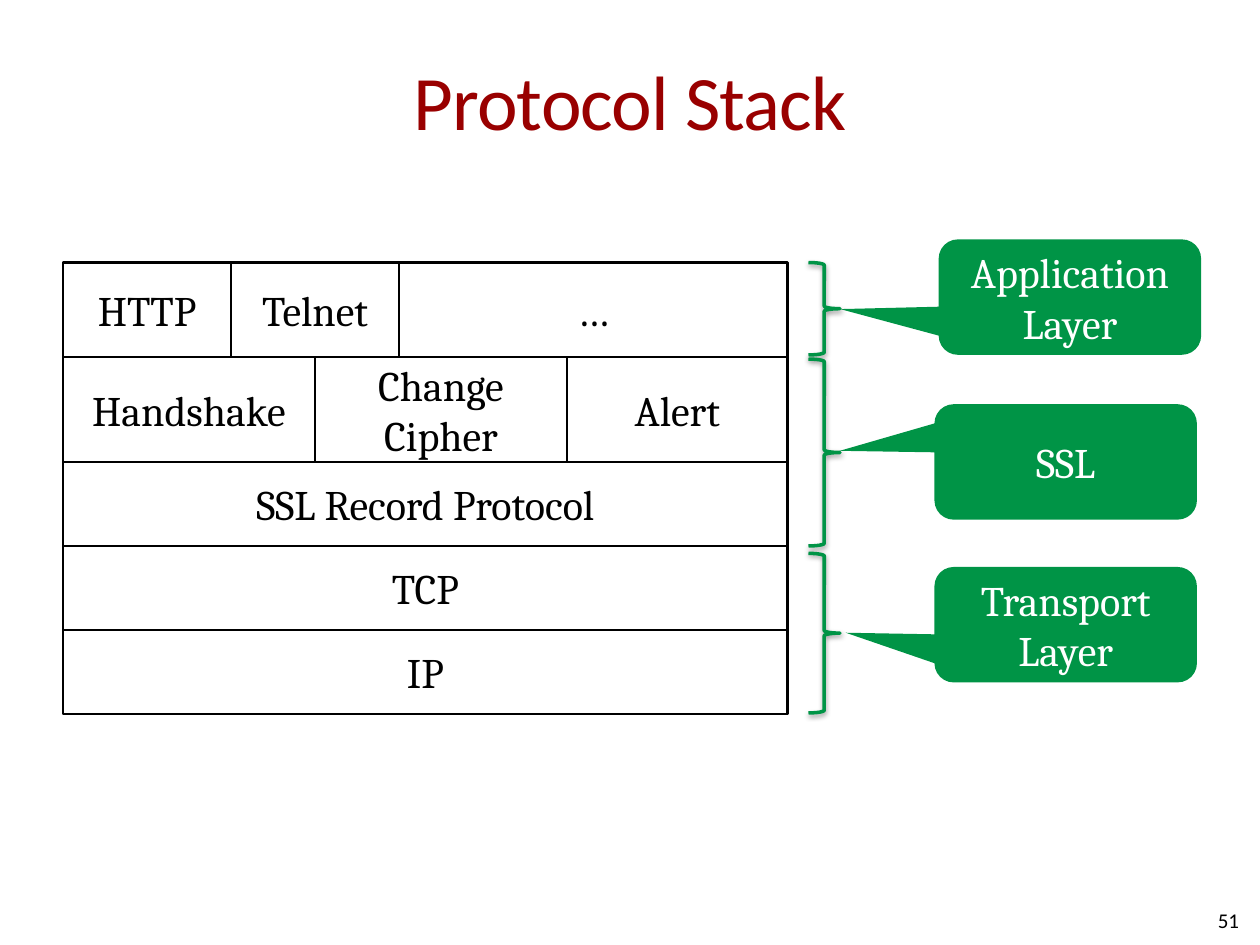
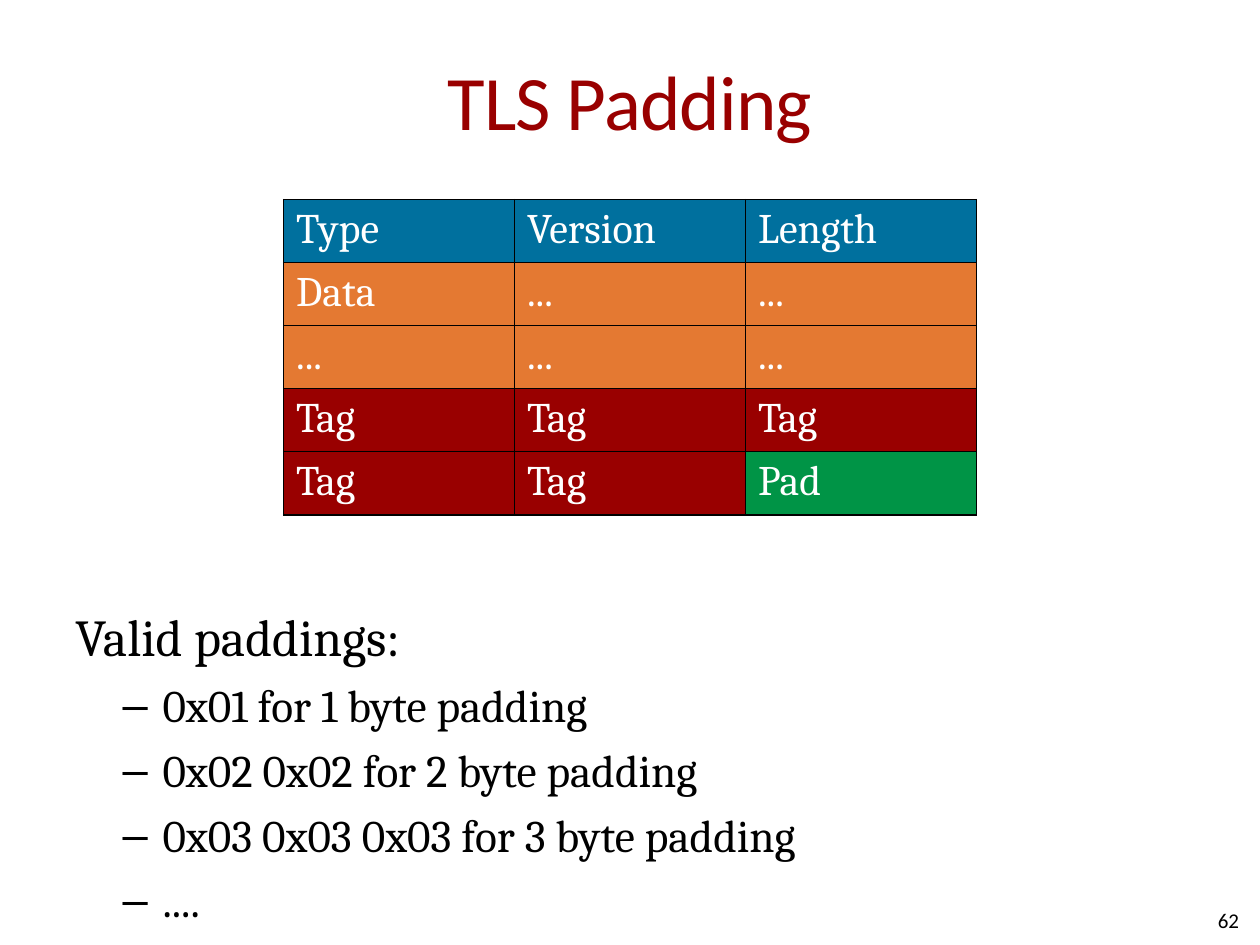
from itertools import accumulate

from pptx import Presentation
from pptx.dml.color import RGBColor
from pptx.enum.shapes import MSO_SHAPE as Shape
from pptx.enum.text import MSO_ANCHOR as Anchor, PP_ALIGN as Align
from pptx.oxml import parse_xml
from pptx.oxml.ns import nsdecls
from pptx.util import Pt

PX = 7620  # EMU, 120 px to the inch

BLACK = RGBColor(0x00, 0x00, 0x00)
WHITE = RGBColor(0xFF, 0xFF, 0xFF)
RED = RGBColor(0x99, 0x00, 0x00)
GREEN = RGBColor(0x00, 0x94, 0x46)
BLUE = RGBColor(0x00, 0x70, 0x9E)
ORANGE = RGBColor(0xE4, 0x79, 0x32)

HEADING_FONT = "Calibri"
TEXT_FONT = "Cambria"


def px(*lengths):
    return [length * PX for length in lengths]


class SlideBuilder:
    """Holds the deck's style and the page being built."""

    def __init__(self, deck):
        self.deck = deck
        self.page = None

    def start_page(self, title, number):
        self.page = self.deck.slides.add_slide(self.deck.slide_layouts[5])
        heading = self.page.shapes.title
        heading.left, heading.top, heading.width, heading.height = px(60, 20, 1080, 150)
        self.set_frame(heading.text_frame, sides=0, ends=6)
        span = self.add_text(heading.text_frame.paragraphs[0], title, 44, RED,
                             Align.CENTER, HEADING_FONT)
        span.font._element.set("spc", "-50")
        footer = self.text_box(900, 852, 280, 48)
        self.set_frame(footer, sides=0, ends=0)
        self.add_text(footer.paragraphs[0], str(number), 12, BLACK, Align.RIGHT, HEADING_FONT)

    def set_frame(self, frame, sides=12, ends=6, anchor=Anchor.MIDDLE, wrap=True):
        frame.margin_left, frame.margin_right = px(sides, sides)
        frame.margin_top, frame.margin_bottom = px(ends, ends)
        frame.vertical_anchor = anchor
        frame.word_wrap = wrap

    def add_text(self, para, text, size=24, color=BLACK, align=Align.LEFT, font=TEXT_FONT):
        """Add text to a paragraph, a line break at each newline; return the last run."""
        para.alignment = align
        for index, line in enumerate(text.split("\n")):
            if index:
                para.add_line_break()
            span = para.add_run()
            span.text = line
            span.font.size = Pt(size)
            span.font.name = font
            span.font.color.rgb = color
        return span

    def text_box(self, left, top, width, height):
        return self.page.shapes.add_textbox(*px(left, top, width, height)).text_frame

    def shape(self, kind, left, top, width, height, fill=None, line=None, weight=1.5):
        shape = self.page.shapes.add_shape(kind, *px(left, top, width, height))
        shape.shadow.inherit = False
        if fill is None:
            shape.fill.background()
        else:
            shape.fill.solid()
            shape.fill.fore_color.rgb = fill
        if line is None:
            shape.line.fill.background()
        else:
            shape.line.color.rgb = line
            shape.line.width = Pt(weight)
        return shape

    def protocol(self, text, left, top, width, height):
        box = self.shape(Shape.RECTANGLE, left, top, width, height, line=BLACK)
        self.set_frame(box.text_frame, wrap=False)
        self.add_text(box.text_frame.paragraphs[0], text, align=Align.CENTER)

    def brace(self, left, top, width, height):
        brace = self.shape(Shape.RIGHT_BRACE, left, top, width, height, line=GREEN, weight=2)
        effects = brace._element.spPr.find("{*}effectLst")
        effects.append(parse_xml(
            f'<a:outerShdw {nsdecls("a")} blurRad="{Pt(3.1)}" dist="{Pt(1.6)}" dir="5400000" '
            'rotWithShape="0"><a:srgbClr val="000000"><a:alpha val="38000"/></a:srgbClr>'
            '</a:outerShdw>'))

    def callout(self, text, left, top, tip):
        box = self.shape(Shape.ROUNDED_RECTANGULAR_CALLOUT, left, top, 250, 110, fill=GREEN)
        box.adjustments[0], box.adjustments[1] = tip
        self.set_frame(box.text_frame, sides=0, ends=0)
        self.add_text(box.text_frame.paragraphs[0], text, color=WHITE, align=Align.CENTER)

    def bullet(self, para, text, size):
        self.add_text(para, text, size)
        props = para._p.get_or_add_pPr()
        props.set("lvl", "1")
        props.set("marL", str(83 * PX))
        props.set("indent", str(-38 * PX))
        props.append(parse_xml(f'<a:buFont {nsdecls("a")} typeface="Arial"/>'))
        props.append(parse_xml(f'<a:buChar {nsdecls("a")} char="–"/>'))

    def table(self, rows, left, top, column_width, row_height):
        """Draw rows of (text, fill) cells."""
        columns = len(rows[0])
        table = self.page.shapes.add_table(
            len(rows), columns,
            *px(left, top, columns * column_width, len(rows) * row_height)).table
        for row_index, row in enumerate(rows):
            for column_index, (text, fill) in enumerate(row):
                cell = table.cell(row_index, column_index)
                self.add_text(cell.text_frame.paragraphs[0], text, color=WHITE)
                self.outline(cell)
                cell.fill.solid()
                cell.fill.fore_color.rgb = fill

    def outline(self, cell):
        props = cell._tc.get_or_add_tcPr()
        for side in ("lnL", "lnR", "lnT", "lnB"):
            props.append(parse_xml(
                f'<a:{side} {nsdecls("a")} w="{Pt(1)}"><a:solidFill>'
                f'<a:srgbClr val="{BLACK}"/></a:solidFill></a:{side}>'))


def protocol_stack(builder):
    builder.start_page("Protocol Stack", 51)
    stack_left, stack_top, stack_width = 60, 250, 690
    layers = [
        (90, [("HTTP", 160), ("Telnet", 160), ("…", 370)]),
        (100, [("Handshake", 240), ("Change\nCipher", 240), ("Alert", 210)]),
        (80, [("SSL Record Protocol", stack_width)]),
        (80, [("TCP", stack_width)]),
        (80, [("IP", stack_width)]),
    ]
    tops = accumulate((height for height, _ in layers), initial=stack_top)
    for top, (height, protocols) in zip(tops, layers):
        lefts = accumulate((width for _, width in protocols), initial=stack_left)
        for left, (name, width) in zip(lefts, protocols):
            builder.protocol(name, left, top, width, height)

    # label, callout left and top, callout tip, brace top and height
    groups = [
        ("Application Layer", 894, 228, (-0.875, 0.104), 250, 88),
        ("SSL", 890, 385, (-0.861, -0.096), 342, 178),
        ("Transport\nLayer", 890, 540, (-0.838, 0.07), 527, 152),
    ]
    for label, left, top, tip, brace_top, brace_height in groups:
        builder.callout(label, left, top, tip)
        builder.brace(770, brace_top, 30, brace_height)


def tls_padding(builder):
    builder.start_page("TLS Padding", 62)
    body = builder.text_box(60, 570, 1080, 310)
    builder.set_frame(body, anchor=Anchor.TOP)
    builder.add_text(body.paragraphs[0], "Valid paddings:", 29.6)
    paddings = ["0x01 for 1 byte padding", "0x02 0x02 for 2 byte padding",
                "0x03 0x03 0x03 for 3 byte padding", "...."]
    for padding in paddings:
        para = body.add_paragraph()
        para.space_before = Pt(6)
        builder.bullet(para, padding, 25.9)

    header = [(name, BLUE) for name in ("Type", "Version", "Length")]
    data, more, tag = ("Data", ORANGE), ("...", ORANGE), ("Tag", RED)
    record = [header, [data, more, more], [more] * 3, [tag] * 3, [tag, tag, ("Pad", GREEN)]]
    builder.table(record, 270, 190, 220, 58)


def main():
    deck = Presentation()
    deck.slide_width, deck.slide_height = px(1200, 900)
    builder = SlideBuilder(deck)
    protocol_stack(builder)
    tls_padding(builder)
    deck.save("out.pptx")


if __name__ == "__main__":
    main()
